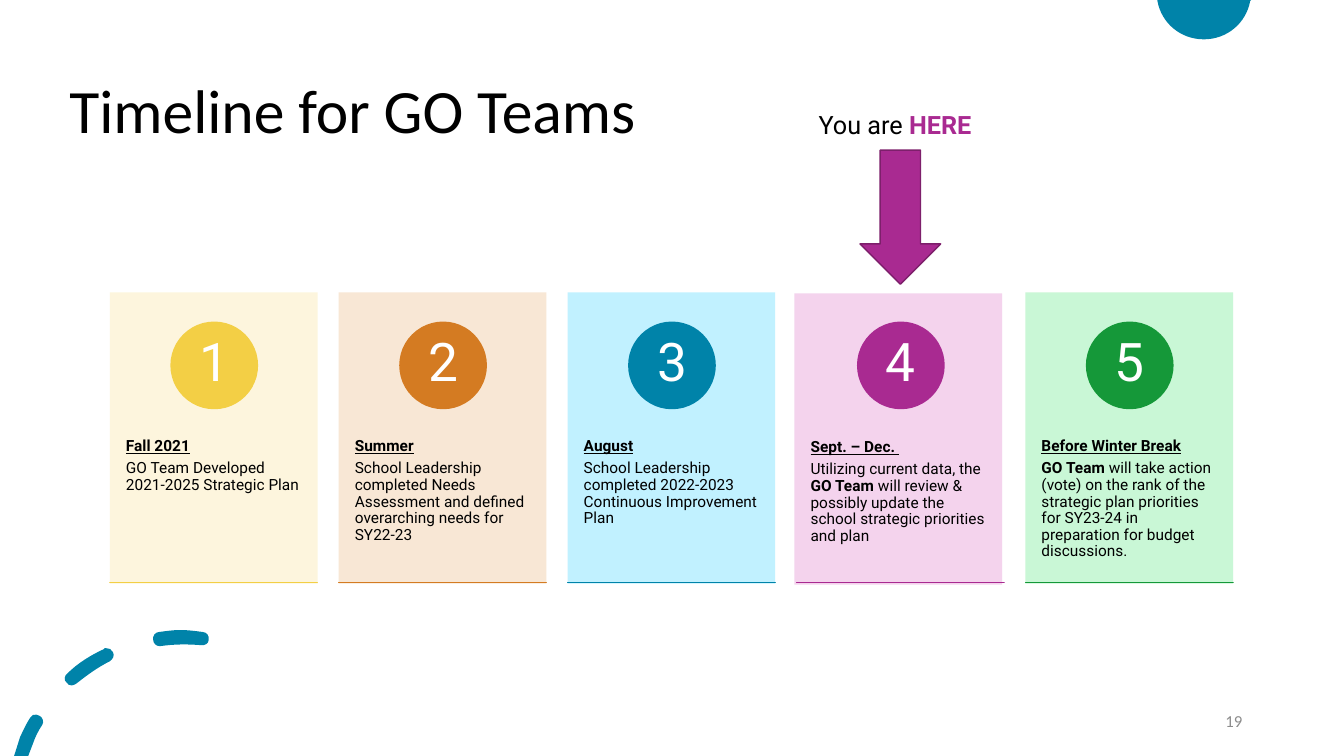
from lxml import etree
from pptx import Presentation
from pptx import util as u
from pptx.dml.color import RGBColor
from pptx.enum import shapes, text
from pptx.oxml.ns import qn

COLORS = {
    "black": "000000", "white": "FFFFFF", "gray": "8C8C8C",
    "teal": "0083A9", "purple": "A92A91", "plum": "7D1F6B",
    "yellow": "F3CF45", "orange": "D47B22", "green": "159839",
    "cream": "FDF5DA", "peach": "F8E5D1", "sky": "BBF0FF",
    "pink": "F3CFEC", "mint": "C4F7D2",
}
STEPS = [
    ("Fall 2021", [("GO Team Developed 2021-2025 Strategic Plan", False)],
     "yellow", "cream", (0, 0)),
    ("Summer", [("School Leadership completed Needs Assessment and defined "
                 "overarching needs for SY22-23", False)],
     "orange", "peach", (0, 0)),
    ("August", [("School Leadership completed 2022-2023 Continuous "
                 "Improvement Plan", False)],
     "teal", "sky", (0, 0)),
    ("Sept. – Dec. ", [("Utilizing current data, the ", False), ("GO Team ", True),
                       ("will review & possibly update the school strategic "
                        "priorities and plan", False)],
     "purple", "pink", (-0.02, 0.01)),
    ("Before Winter Break", [("GO Team ", True),
                             ("will take action (vote) on the rank of the strategic plan "
                              "priorities for SY23-24 in preparation for budget "
                              "discussions.", False)],
     "green", "mint", (0, 0)),
]
CAP = [
    [(0, 0), (0.93, 0), (0.92, 0.01), (0.88, 0.23, 0.69, 0.39, 0.46, 0.39),
     (0.23, 0.39, 0.04, 0.23, 0, 0.01)],
]
DASHES = [
    [(0.22, 0.84), (0.2, 0.83, 0.17, 0.85, 0.16, 0.87),
     (0.12, 0.93, 0.09, 1, 0.06, 1.06), (0, 1.25), (0.14, 1.25), (0.19, 1.12),
     (0.21, 1.06, 0.24, 1, 0.28, 0.94), (0.3, 0.91, 0.28, 0.86, 0.25, 0.85),
     (0.24, 0.84, 0.23, 0.84, 0.22, 0.84)],
    [(0.91, 0.18), (0.9, 0.18, 0.89, 0.18, 0.89, 0.19),
     (0.76, 0.25, 0.63, 0.33, 0.53, 0.43), (0.5, 0.45, 0.49, 0.5, 0.52, 0.52),
     (0.53, 0.54, 0.55, 0.55, 0.57, 0.55), (0.59, 0.55, 0.6, 0.54, 0.62, 0.53),
     (0.72, 0.45, 0.83, 0.37, 0.95, 0.31), (0.98, 0.29, 1, 0.25, 0.98, 0.22),
     (0.97, 0.19, 0.94, 0.18, 0.91, 0.18)],
    [(1.65, 0), (1.58, 0, 1.51, 0.01, 1.44, 0.02),
     (1.4, 0.02, 1.37, 0.06, 1.38, 0.1), (1.38, 0.13, 1.41, 0.16, 1.44, 0.16),
     (1.45, 0.16, 1.45, 0.16, 1.45, 0.16), (1.59, 0.14, 1.72, 0.14, 1.85, 0.15),
     (1.89, 0.16, 1.93, 0.13, 1.93, 0.1), (1.94, 0.06, 1.91, 0.02, 1.87, 0.02),
     (1.8, 0.01, 1.72, 0, 1.65, 0)],
]


def rgb(name):
    """Return the named palette colour."""
    return RGBColor.from_string(COLORS[name])


def paint(sp, fill, line=None, alpha=None):
    """Set fill, outline and opacity of a shape without a shadow."""
    sp.shadow.inherit = False
    sp.fill.solid()
    sp.fill.fore_color.rgb = rgb(fill)
    if line:
        sp.line.color.rgb = rgb(line)
        sp.line.width = u.Pt(1)
    else:
        sp.line.fill.background()
    if alpha:
        color = sp._element.spPr.find(qn("a:solidFill"))[0]
        etree.SubElement(color, qn("a:alpha")).set("val", str(alpha * 1000))


def add_box(s, kind, box, fill, **style):
    """Add a painted preset shape in an inch box."""
    sp = s.shapes.add_shape(kind, *map(u.Inches, box))
    paint(sp, fill, **style)


def add_text(s, box, paragraphs, size, font="Roboto", color="black", align="LEFT",
             anchor="TOP", inset=(0.1, 0.05), spacing=1.0, after=0, fit="NONE"):
    """Add a text box whose paragraphs are lists of (text, format) runs."""
    tf = s.shapes.add_textbox(*map(u.Inches, box)).text_frame
    tf.word_wrap = True
    tf.auto_size = text.MSO_AUTO_SIZE[fit]
    tf.vertical_anchor = text.MSO_ANCHOR[anchor]
    tf.margin_left = tf.margin_right = u.Inches(inset[0])
    tf.margin_top = tf.margin_bottom = u.Inches(inset[1])
    for i, runs in enumerate(paragraphs):
        p = tf.paragraphs[0] if i == 0 else tf.add_paragraph()
        p.alignment = text.PP_ALIGN[align]
        p.line_spacing = spacing
        p.space_after = u.Pt(after)
        for words, form in runs:
            r = p.add_run()
            r.text = words
            r.font.name = font
            r.font.size = u.Pt(size)
            r.font.bold = form.get("bold", False)
            r.font.underline = form.get("underline", False)
            r.font.color.rgb = rgb(form.get("color", color))


def add_ornament(s, left, top, outlines):
    """Draw closed outlines of points and cubic curves as one teal shape."""
    def place(x, y):
        return u.Inches(left + x), u.Inches(top + y)

    builder = s.shapes.build_freeform(*place(*outlines[0][0]))
    for i, outline in enumerate(outlines):
        if i:
            builder.move_to(*place(*outline[0]))
        builder.add_line_segments([place(*seg[-2:]) for seg in outline[1:]], close=False)
        builder.add_line_segments([], close=True)
    sp = builder.convert_to_shape()
    paint(sp, "teal")
    segments = [seg for outline in outlines for seg in outline[1:]]
    lines = list(sp._element.iter(qn("a:lnTo")))
    closing = set()
    count = -1
    for outline in outlines:
        count += len(outline)
        closing.add(count)
    drawn = lines if len(lines) == len(segments) else [
        line for i, line in enumerate(lines) if i not in closing]
    for line, seg in zip(drawn, segments):
        if len(seg) == 2:
            continue
        line.tag = qn("a:cubicBezTo")
        for i in (2, 0):
            x, y = place(*seg[i:i + 2])
            pt = etree.Element(qn("a:pt"), x=str(x - sp.left), y=str(y - sp.top))
            line.insert(0, pt)


def add_card(s, box, number, step):
    """Place one timeline card in its box."""
    x, y, w, h = box
    heading, body, accent, tint, (dx, dy) = step
    add_box(s, shapes.MSO_SHAPE.RECTANGLE, (x + dx, y + dy, w, h), tint, alpha=90)
    add_text(s, (x + dx, y + dy + 1.09, w, 1.73),
             [[(heading, {"bold": True, "underline": True})],
              [(words, {"bold": bold}) for words, bold in body]],
             11, inset=(0.16, 0.36), spacing=0.9, after=3.85)
    add_box(s, shapes.MSO_SHAPE.OVAL, (x + 0.6, y + 0.29, 0.87, 0.87), accent)
    add_text(s, (x + 0.73, y + 0.41, 0.61, 0.61), [[(str(number), {})]], 38,
             color="white", align="CENTER", anchor="MIDDLE", inset=(0.07, 0.01),
             spacing=0.9)
    add_box(s, shapes.MSO_SHAPE.RECTANGLE, (x, y + 2.88, w, 0), accent, line=accent)


def add_timeline(s, x, y, pitch=2.27):
    """Place the grouped cards side by side at an equal pitch."""
    group = s.shapes.add_group_shape()
    for i, step in enumerate(STEPS):
        add_card(group, (x + i * pitch, y, 2.06, 2.89), i + 1, step)


def add_marker(s, x, y):
    """Place the current-position arrow and its label."""
    add_box(s, shapes.MSO_SHAPE.DOWN_ARROW, (x + 0.51, y + 0.45, 0.8, 1.33),
            "purple", line="plum")
    add_text(s, (x, y, 1.82, 0.4),
             [[("You are ", {}), ("HERE", {"bold": True, "color": "purple"})]], 18,
             fit="SHAPE_TO_FIT_TEXT")


def main():
    """Build and save the slide."""
    prs = Presentation()
    prs.slide_width, prs.slide_height = u.Inches(13.33), u.Inches(7.5)
    s = prs.slides.add_slide(prs.slide_layouts[6])
    add_ornament(s, 11.48, 0, CAP)
    add_ornament(s, 0.14, 6.25, DASHES)
    add_text(s, (0.59, 0.4, 11.5, 1.45), [[("Timeline for GO Teams", {})]], 44,
             font="Calibri", anchor="MIDDLE", spacing=0.9)
    add_timeline(s, 1.09, 2.9)
    add_text(s, (9.42, 6.95, 3, 0.4), [[("19", {})]], 12, font="Calibri",
             color="gray", align="RIGHT", anchor="MIDDLE")
    add_marker(s, 8.02, 1.04)
    prs.save("out.pptx")


if __name__ == "__main__":
    main()
